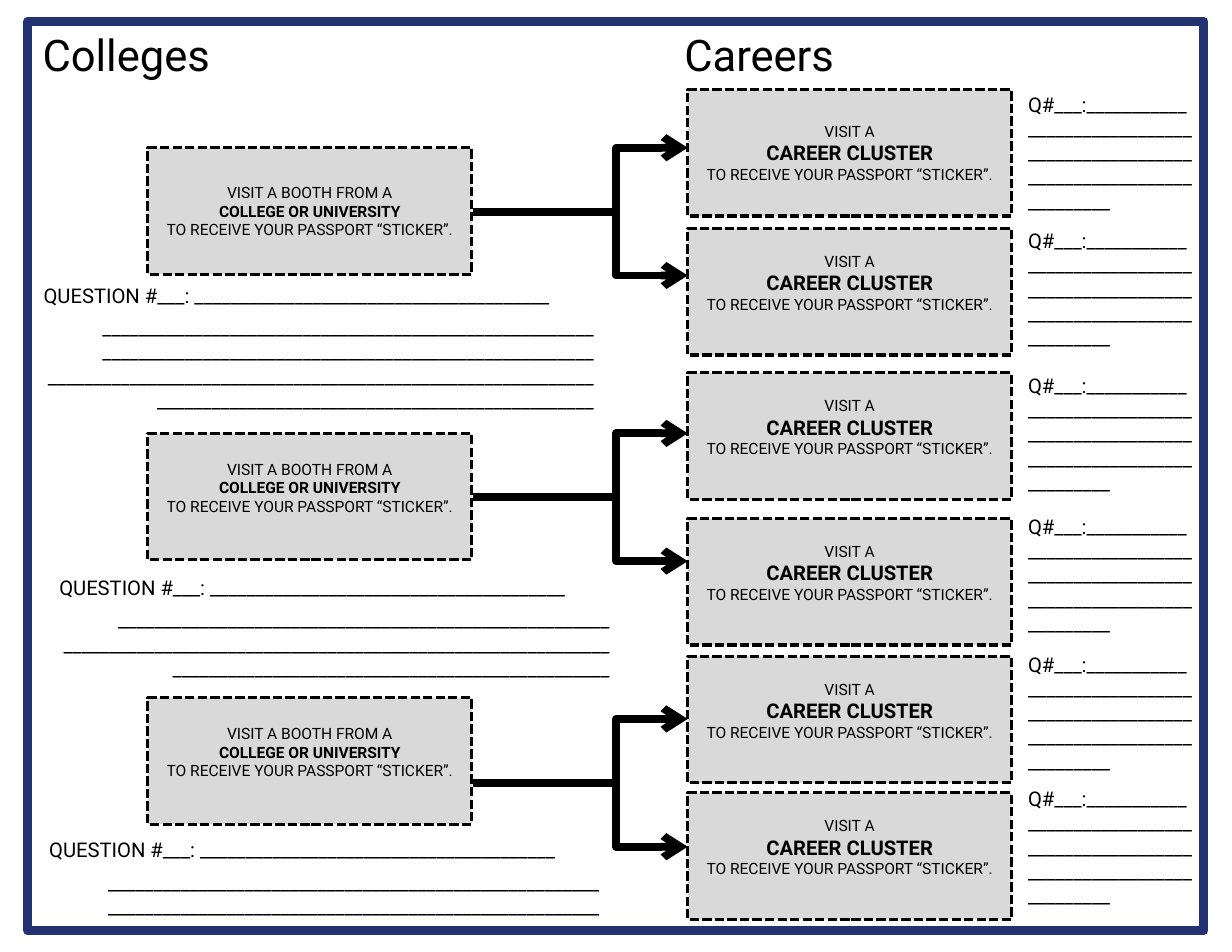
from lxml.etree import SubElement
from pptx import Presentation
from pptx.dml.color import RGBColor
from pptx.enum.dml import MSO_LINE
from pptx.enum.shapes import MSO_CONNECTOR, MSO_SHAPE
from pptx.enum.text import MSO_ANCHOR, PP_ALIGN
from pptx.oxml.ns import qn
from pptx.util import Inches, Pt

NAVY = RGBColor(0x25, 0x32, 0x71)
BLACK = RGBColor(0, 0, 0)
GREY = RGBColor(0xD9, 0xD9, 0xD9)
FONT = "Roboto"

# Columns and sizes, in inches
COLLEGE_LEFT, CAREER_LEFT, NOTE_LEFT = 1.32, 6.14, 9.07
CARD_WIDTH, CARD_HEIGHT = 2.89, 1.13
BRANCH_X = 5.5
NOTE_WIDTH, NOTE_HEIGHT = 1.7, 1.21
QUESTION_WIDTH = 5.13
LINE_HEIGHT = 0.21

# Rows: card top and bottom text inset
COLLEGE_CARDS = [(1.32, 0.06), (3.87, 0.22), (6.23, 0.22)]
CAREER_CARDS = [(0.8, 0.06), (2.04, 0.22), (3.33, 0.22),
                (4.63, 0.22), (5.86, 0.22), (7.08, 0.22)]
NOTE_TOPS = [0.76, 1.98, 3.27, 4.53, 5.76, 6.96]
FORK_ROWS = [1.89, 4.44, 6.99]
# Left, top and the length of each answer line in underscores
QUESTIONS = [(0.28, 2.47, [54, 54, 108]),
             (0.42, 5.08, [54, 108]),
             (0.33, 7.42, [54, 54])]


def prepare_frame(shape, bottom=0.06):
    frame = shape.text_frame
    frame.word_wrap = True
    frame.margin_left = frame.margin_right = Inches(0.11)
    frame.margin_top, frame.margin_bottom = Inches(0.06), Inches(bottom)
    return frame


def write_lines(frame, lines):
    """Write (text, size, bold, alignment) lines as paragraphs."""
    for index, (text, size, bold, alignment) in enumerate(lines):
        paragraph = frame.paragraphs[0] if index == 0 else frame.add_paragraph()
        paragraph.text = text
        paragraph.alignment = alignment
        paragraph.font.name = FONT
        paragraph.font.size = Pt(size)
        paragraph.font.bold = bold
        paragraph.font.color.rgb = BLACK


def add_text(slide, left, top, width, height, lines):
    box = slide.shapes.add_textbox(*map(Inches, (left, top, width, height)))
    frame = prepare_frame(box)
    write_lines(frame, lines)
    return frame


def add_border(slide):
    border = slide.shapes.add_shape(
        MSO_SHAPE.RECTANGLE, *map(Inches, (0.25, 0.19, 10.5, 8.12)))
    border.shadow.inherit = False
    border.fill.background()
    border.line.color.rgb = NAVY
    border.line.width = Pt(5.75)


def add_heading(slide, left, width, text):
    add_text(slide, left, 0.19, width, 0.58, [(text, 28, False, PP_ALIGN.LEFT)])


def add_card(slide, left, top, bottom_inset, opening, target, target_size):
    card = slide.shapes.add_shape(
        MSO_SHAPE.RECTANGLE, *map(Inches, (left, top, CARD_WIDTH, CARD_HEIGHT)))
    card.shadow.inherit = False
    card.fill.solid()
    card.fill.fore_color.rgb = GREY
    card.line.color.rgb = BLACK
    card.line.width = Pt(2)
    card.line.dash_style = MSO_LINE.SQUARE_DOT
    frame = prepare_frame(card, bottom_inset)
    frame.vertical_anchor = MSO_ANCHOR.MIDDLE
    write_lines(frame, [
        (opening, 10, False, PP_ALIGN.CENTER),
        (target, target_size, True, PP_ALIGN.CENTER),
        ("TO RECEIVE YOUR PASSPORT “STICKER”.", 10, False, PP_ALIGN.CENTER),
    ])


def add_question(slide, left, top, answer_lengths):
    height = 0.4 + LINE_HEIGHT * sum(answer_lengths) / 54
    lines = [("QUESTION #___: " + "_" * 39, 13, False, PP_ALIGN.LEFT)]
    lines += [("_" * length, 13, False, PP_ALIGN.RIGHT) for length in answer_lengths]
    frame = add_text(slide, left, top, QUESTION_WIDTH, height, lines)
    frame.paragraphs[1].space_before = Pt(5)


def add_note(slide, top):
    add_text(slide, NOTE_LEFT, top, NOTE_WIDTH, NOTE_HEIGHT,
             [("Q#___:" + "_" * 74, 13, False, PP_ALIGN.LEFT)])


def add_fork(slide, middle):
    """Lead from one college card to two career cards."""
    for start, rise in ((4.49, -0.57), (4.22, 0.57)):
        connector = slide.shapes.add_connector(
            MSO_CONNECTOR.ELBOW,
            *map(Inches, (start, middle, CAREER_LEFT, middle + rise)))
        connector.line.color.rgb = BLACK
        connector.line.width = Pt(5)
        properties = connector._element.spPr
        bend = round((BRANCH_X - start) / (CAREER_LEFT - start) * 100000)
        guides = properties.find(qn("a:prstGeom")).get_or_add_avLst()
        SubElement(guides, qn("a:gd"), name="adj1", fmla=f"val {bend}")
        SubElement(connector.line._get_or_add_ln(), qn("a:tailEnd"), type="arrow")
        SubElement(properties, qn("a:effectLst"))


def main():
    presentation = Presentation()
    presentation.slide_width, presentation.slide_height = Inches(11), Inches(8.5)
    slide = presentation.slides.add_slide(presentation.slide_layouts[6])

    add_border(slide)
    add_heading(slide, 0.27, 4.95, "Colleges")
    add_heading(slide, 6, 4.82, "Careers")
    for top, inset in COLLEGE_CARDS:
        add_card(slide, COLLEGE_LEFT, top, inset,
                 "VISIT A BOOTH FROM A", "COLLEGE OR UNIVERSITY", 10)
    for top, inset in CAREER_CARDS:
        add_card(slide, CAREER_LEFT, top, inset, "VISIT A", "CAREER CLUSTER", 13)
    for middle in FORK_ROWS:
        add_fork(slide, middle)
    for left, top, answer_lengths in QUESTIONS:
        add_question(slide, left, top, answer_lengths)
    for top in NOTE_TOPS:
        add_note(slide, top)

    presentation.save("out.pptx")


if __name__ == "__main__":
    main()
